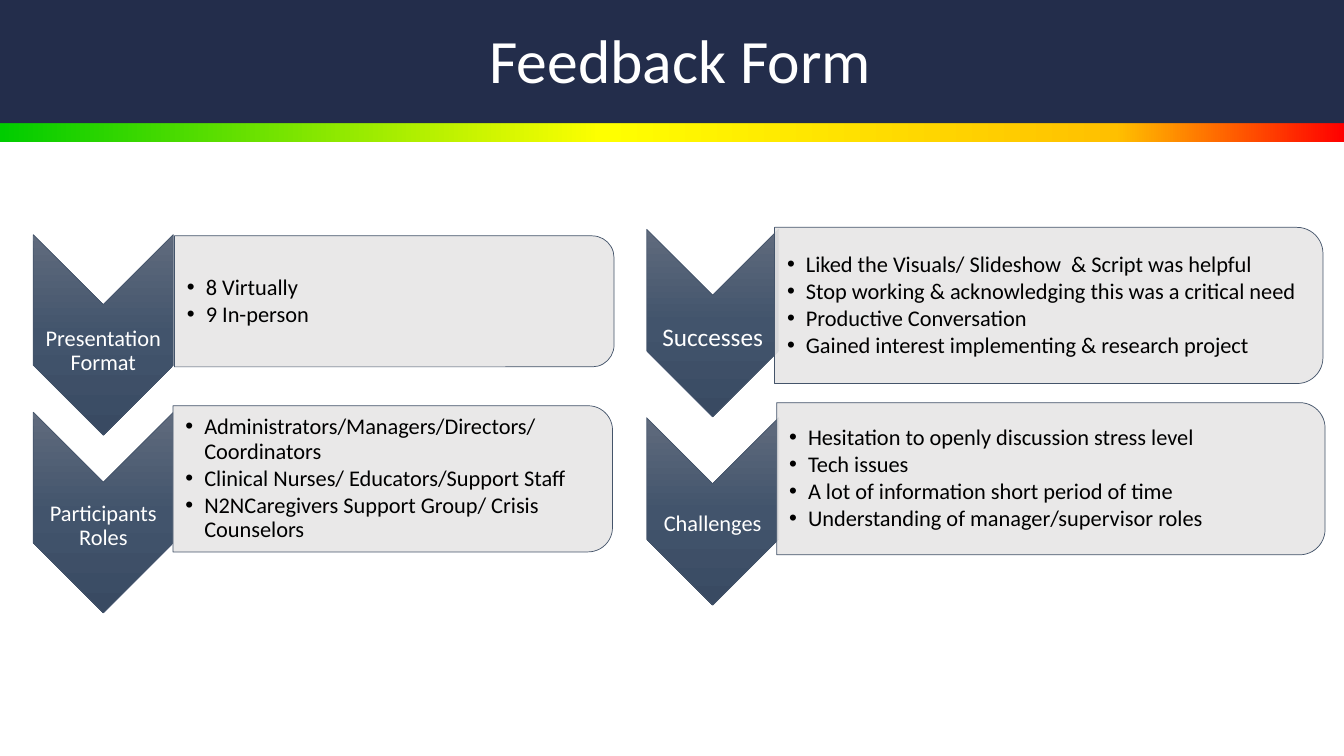
from lxml import etree
from pptx import Presentation
from pptx.dml.color import RGBColor
from pptx.enum.shapes import MSO_SHAPE
from pptx.enum.text import MSO_ANCHOR, PP_ALIGN
from pptx.oxml.ns import qn
from pptx.util import Pt

RECT = MSO_SHAPE.RECTANGLE
ARROW = MSO_SHAPE.CHEVRON
PANEL = MSO_SHAPE.ROUND_2_SAME_RECTANGLE
MIDDLE = MSO_ANCHOR.MIDDLE
CENTER = PP_ALIGN.CENTER

FONT = "Calibri"
WIDE, HIGH = 960, 540
HEAD = 88
SCALE = [(0, "00CC00"), (45, "FFFF00"), (83, "FFC000"), (100, "FF0000")]
STEEL = [(0, "606B7D"), (50, "42546C"), (100, "394A62")]

# Each row: arrow box, panel box, label, label size, label centre, points
ROWS = [
    ((23.8, 167.6, 100, 143.3), (124.6, 168.5, 314, 93.6),
     "Presentation Format", 16, 0.58,
     ["8 Virtually", "9 In-person"]),
    ((23.8, 294.5, 100, 143.3), (123.5, 289.8, 314, 104.4),
     "Participants Roles", 16, 0.57,
     ["Administrators/Managers/Directors/Coordinators",
      "Clinical Nurses/ Educators/Support Staff",
      "N2NCaregivers Support Group/ Crisis Counselors"]),
    ((461.9, 163.8, 94.3, 133.9), (553.3, 162.4, 391.7, 111.6),
     "Successes", 18, 0.58,
     ["Liked the Visuals/ Slideshow  & Script was helpful",
      "Stop working & acknowledging this was a critical need",
      "Productive Conversation",
      "Gained interest implementing & research project"]),
    ((461.9, 298.4, 94.3, 133.9), (554.8, 287.6, 391.7, 108.7),
     "Challenges", 16, 0.57,
     ["Hesitation to openly discussion stress level",
      "Tech issues",
      "A lot of information short period of time",
      "Understanding of manager/supervisor roles"]),
]


def color(code):
    return RGBColor.from_string(code)


def shade(shape, stops, angle):
    """Fill with a linear gradient that stays upright when the shape turns."""
    shape.fill.gradient()
    grad = shape._element.spPr.find(qn("a:gradFill"))
    for child in list(grad):
        grad.remove(child)
    grad.set("rotWithShape", "0")
    group = etree.SubElement(grad, qn("a:gsLst"))
    for place, code in stops:
        stop = etree.SubElement(group, qn("a:gs"), pos=str(place * 1000))
        etree.SubElement(stop, qn("a:srgbClr"), val=code)
    etree.SubElement(grad, qn("a:lin"), ang=str(angle * 60000), scaled="0")


def add_form(slide, kind, box, turn=False):
    """Add a shape that covers box, turned a quarter clockwise if asked."""
    left, top, width, height = box
    if turn:
        left += (width - height) / 2
        top += (height - width) / 2
        width, height = height, width
    shape = slide.shapes.add_shape(
        kind, Pt(left), Pt(top), Pt(width), Pt(height))
    shape.shadow.inherit = False
    if turn:
        shape.rotation = 90
        shape.line.color.rgb = color("44546A")
        shape.line.width = Pt(0.5)
    else:
        shape.line.fill.background()
    return shape


def style(para, size, code):
    para.line_spacing = 0.9
    for run in para.runs:
        run.font.name = FONT
        run.font.size = Pt(size)
        run.font.color.rgb = color(code)


def add_text(slide, box, inset):
    frame = slide.shapes.add_textbox(*map(Pt, box)).text_frame
    frame.word_wrap = True
    frame.vertical_anchor = MIDDLE
    frame.margin_left = Pt(inset)
    frame.margin_right = frame.margin_top = frame.margin_bottom = Pt(0.7)
    return frame


def add_head(slide, box):
    left, top, width, height = box
    # Banner and colour scale
    scale = add_form(slide, RECT, (left, top + height, width, 13.5))
    shade(scale, SCALE, 0)
    banner = add_form(slide, RECT, box)
    banner.fill.solid()
    banner.fill.fore_color.rgb = color("232D4B")
    # Title, brought in front of the banner
    title = slide.shapes.title
    title.left, title.top = Pt(left + 120), Pt(top + 6)
    title.width, title.height = Pt(732), Pt(79)
    frame = title.text_frame
    frame.text = "Feedback Form"
    frame.vertical_anchor = MIDDLE
    frame.paragraphs[0].alignment = CENTER
    style(frame.paragraphs[0], 44, "FFFFFF")
    slide.shapes._spTree.append(title._element)


def add_arrow(slide, box, label, size, share):
    left, top, width, height = box
    shade(add_form(slide, ARROW, box, True), STEEL, 90)
    # Label, centred at its share of the arrow height
    deep = 44
    place = (left, top + height * share - deep / 2, width, deep)
    frame = add_text(slide, place, 0.7)
    frame.text = label
    frame.paragraphs[0].alignment = CENTER
    style(frame.paragraphs[0], size, "FFFFFF")


def add_panel(slide, box, points):
    left, top, width, height = box
    panel = add_form(slide, PANEL, box, True)
    panel.fill.solid()
    panel.fill.fore_color.rgb = color("E7E6E6")
    tint = panel._element.spPr.find(qn("a:solidFill"))[0]
    etree.SubElement(tint, qn("a:alpha"), val="90000")
    # Bulleted points
    frame = add_text(slide, (left, top, width - 5, height), 8.9)
    frame.text = "\n".join(points)
    for para in frame.paragraphs:
        style(para, 16, "000000")
        para.space_after = Pt(2)
        props = para._p.get_or_add_pPr()
        props.set("marL", str(Pt(13.5)))
        props.set("indent", str(Pt(-13.5)))
        etree.SubElement(props, qn("a:buFont"), typeface="Arial")
        etree.SubElement(props, qn("a:buChar"), char="•")


def main():
    deck = Presentation()
    deck.slide_width, deck.slide_height = Pt(WIDE), Pt(HIGH)
    slide = deck.slides.add_slide(deck.slide_layouts[5])
    add_head(slide, (0, 0, WIDE, HEAD))
    for arrow, panel, label, size, share, points in ROWS:
        add_arrow(slide, arrow, label, size, share)
        add_panel(slide, panel, points)
    deck.save("out.pptx")


if __name__ == "__main__":
    main()
